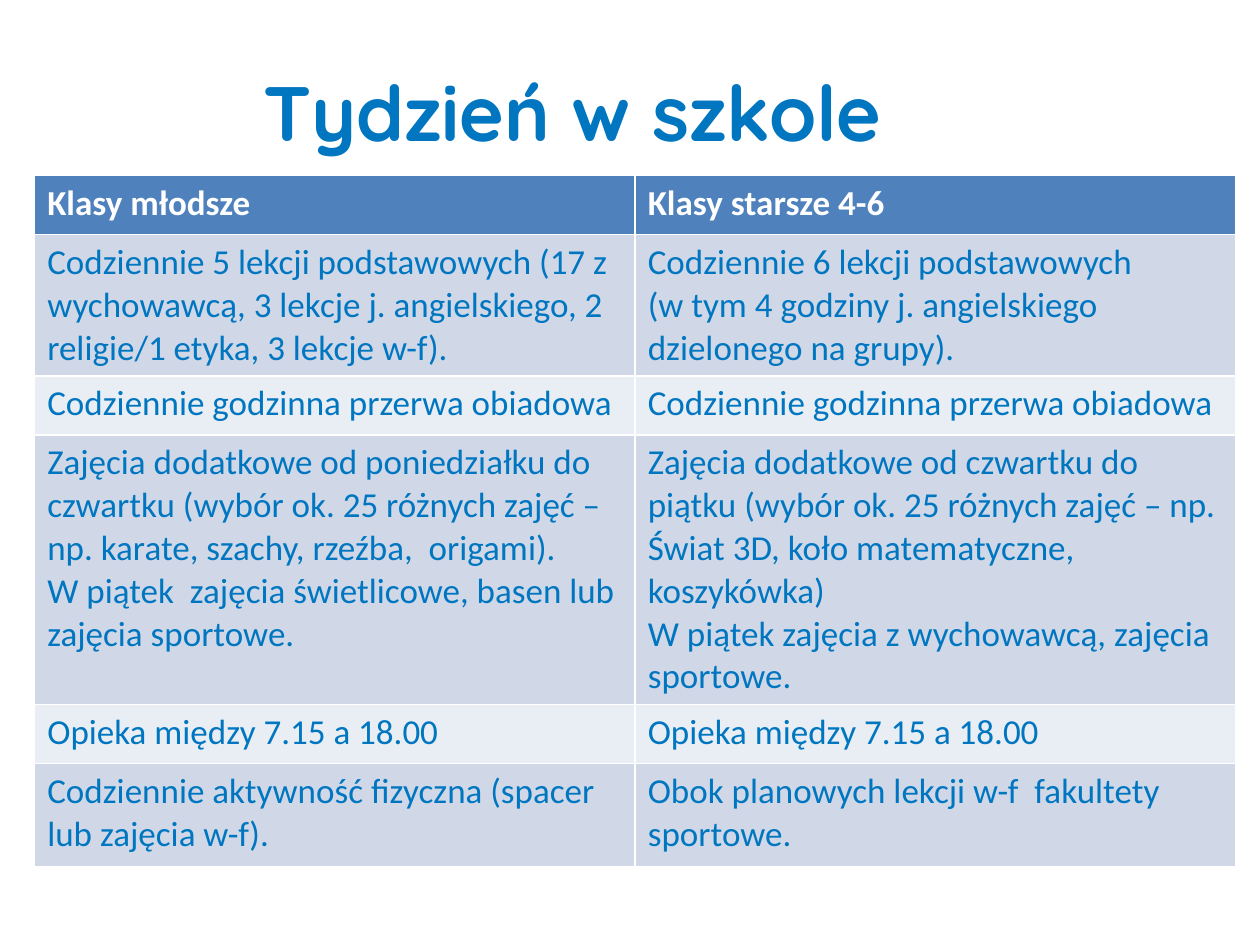
from pptx import Presentation
from pptx.dml.color import RGBColor
from pptx.enum.text import MSO_ANCHOR, PP_ALIGN
from pptx.util import Cm, Pt

COLORS = {
    "text": "0076C0",
    "header": "4F81BD",
    "header_text": "FFFFFF",
    "dark_band": "D0D8E8",
    "light_band": "E9EDF4",
}

ROW_HEIGHTS = [1.19, 2.8, 1.19, 5.34, 1.19, 2.08]
ROWS = [
    ("Klasy młodsze", "Klasy starsze 4-6"),
    (
        "Codziennie 5 lekcji podstawowych (17 z wychowawcą, "
        "3 lekcje j. angielskiego, 2 religie/1 etyka, 3 lekcje w-f).",
        "Codziennie 6 lekcji podstawowych \v"
        "(w tym 4 godziny j. angielskiego dzielonego na grupy).",
    ),
    ("Codziennie godzinna przerwa obiadowa",) * 2,
    (
        "Zajęcia dodatkowe od poniedziałku do czwartku "
        "(wybór ok. 25 różnych zajęć –\n"
        "np. karate, szachy, rzeźba,  origami).\n"
        "W piątek  zajęcia świetlicowe, basen lub zajęcia sportowe.",
        "Zajęcia dodatkowe od czwartku do piątku (wybór ok. 25 różnych "
        "zajęć – np. Świat 3D, koło matematyczne, koszykówka)\n"
        "W piątek zajęcia z wychowawcą, zajęcia sportowe.",
    ),
    ("Opieka między 7.15 a 18.00",) * 2,
    (
        "Codziennie aktywność fizyczna (spacer lub zajęcia w-f).",
        "Obok planowych lekcji w-f  fakultety sportowe.",
    ),
]


def rgb(name):
    return RGBColor.from_string(COLORS[name])


def format_runs(tf, font, size, color, bold):
    for p in tf.paragraphs:
        for r in p.runs:
            r.font.name = font
            r.font.size = Pt(size)
            r.font.bold = bold
            r.font.color.rgb = rgb(color)


def place_title(s, text, left, top, width, height):
    title = s.shapes.title
    title.left, title.top = left, top
    title.width, title.height = width, height
    tf = title.text_frame
    tf.text = text
    tf.vertical_anchor = MSO_ANCHOR.MIDDLE
    tf.paragraphs[0].alignment = PP_ALIGN.CENTER
    format_runs(tf, "Quicksand", 44, "text", True)


def add_week_table(s, left, top, width):
    height = Cm(sum(ROW_HEIGHTS))
    table = s.shapes.add_table(len(ROWS), 2, left, top, width, height).table
    for i, (texts, row_height) in enumerate(zip(ROWS, ROW_HEIGHTS)):
        table.rows[i].height = Cm(row_height)
        is_header = i == 0
        band = "header" if is_header else "dark_band" if i % 2 else "light_band"
        color = "header_text" if is_header else "text"
        for cell, text in zip(table.rows[i].cells, texts):
            cell.fill.solid()
            cell.fill.fore_color.rgb = rgb(band)
            cell.text_frame.text = text
            format_runs(cell.text_frame, "Calibri", 20, color, is_header)


def main():
    prs = Presentation()
    prs.slide_width, prs.slide_height = Cm(25.4), Cm(19.05)
    s = prs.slides.add_slide(prs.slide_layouts[5])
    place_title(s, "Tydzień w szkole", Cm(1.27), Cm(0.76), Cm(20.55), Cm(2.94))
    add_week_table(s, Cm(0.7), Cm(3.54), Cm(24.21))
    prs.save("out.pptx")


if __name__ == "__main__":
    main()
